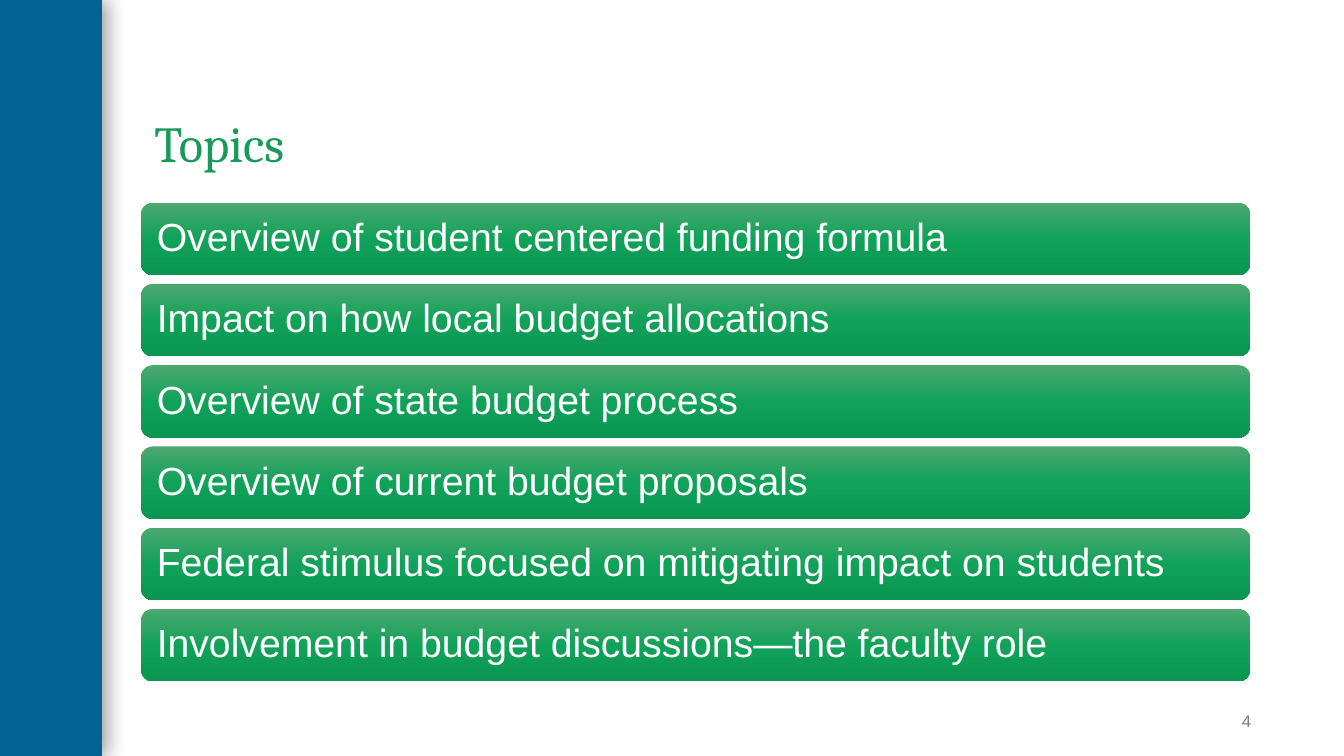
import pptx
import pptx.dml.color
import pptx.enum.shapes
import pptx.enum.text
import pptx.oxml
import pptx.oxml.ns
import pptx.util

Inches = pptx.util.Inches
Shapes = pptx.enum.shapes.MSO_SHAPE
Anchor = pptx.enum.text.MSO_ANCHOR
Align = pptx.enum.text.PP_ALIGN

TOPICS = [
    "Overview of student centered funding formula",
    "Impact on how local budget allocations",
    "Overview of state budget process",
    "Overview of current budget proposals",
    "Federal stimulus focused on mitigating impact on students",
    "Involvement in budget discussions—the faculty role",
]
BAR_GRADIENT = [(0, "4DA870"), (50, "11A25A"), (100, "0A9550")]
NAMESPACE = pptx.oxml.ns.nsdecls("a")


def color(value):
    """Return the colour for a hex string."""
    return pptx.dml.color.RGBColor.from_string(value)


def write_text(shape, text, size, font, hex_color, anchor, insets, align=Align.LEFT, spacing=0.9):
    """Write one formatted paragraph into a shape and return the paragraph."""
    frame = shape.text_frame
    frame.word_wrap = True
    frame.vertical_anchor = anchor
    frame.margin_left, frame.margin_top, frame.margin_right, frame.margin_bottom = map(Inches, insets)
    paragraph = frame.paragraphs[0]
    paragraph.alignment = align
    paragraph.line_spacing = spacing
    run = paragraph.add_run()
    run.text = text
    run.font.size = pptx.util.Pt(size)
    run.font.name = font
    run.font.color.rgb = color(hex_color)
    return paragraph


def fill_gradient(shape, stops):
    """Fill a shape with a gradient running from top to bottom."""
    stop_xml = "".join(
        f'<a:gs pos="{position * 1000}"><a:srgbClr val="{value}"/></a:gs>' for position, value in stops
    )
    gradient = pptx.oxml.parse_xml(
        f'<a:gradFill {NAMESPACE} rotWithShape="1"><a:gsLst>{stop_xml}</a:gsLst>'
        '<a:lin ang="5400000" scaled="0"/></a:gradFill>'
    )
    shape._element.spPr.find(pptx.oxml.ns.qn("a:prstGeom")).addnext(gradient)


def add_side_band(slide, left, top, width, height):
    """Add the blue band with its soft shadow to the right."""
    band = slide.shapes.add_shape(Shapes.RECTANGLE, *map(Inches, (left, top, width, height)))
    band.fill.solid()
    band.fill.fore_color.rgb = color("006393")
    band.line.fill.background()
    band.shadow.inherit = False
    shadow = pptx.oxml.parse_xml(
        f'<a:outerShdw {NAMESPACE} blurRad="{pptx.util.Pt(15)}" dist="{pptx.util.Pt(3)}" dir="0" '
        'algn="l" rotWithShape="0"><a:srgbClr val="000000"><a:alpha val="40000"/></a:srgbClr></a:outerShdw>'
    )
    band._element.spPr.find(pptx.oxml.ns.qn("a:effectLst")).append(shadow)


def add_title(slide, left, top, width, height):
    """Add the slide title at the bottom of its box."""
    box = slide.shapes.add_textbox(*map(Inches, (left, top, width, height)))
    write_text(box, "Topics", 36, "Cambria", "189B5A", Anchor.BOTTOM, [0.13] * 4)


def add_topic_bars(slide, left, top, width, height):
    """Stack one rounded bar per topic, evenly spaced over the box."""
    bar_height = 0.72
    pitch = (height - bar_height) / (len(TOPICS) - 1)
    for index, topic in enumerate(TOPICS):
        bar = slide.shapes.add_shape(
            Shapes.ROUNDED_RECTANGLE, *map(Inches, (left, top + index * pitch, width, bar_height))
        )
        fill_gradient(bar, BAR_GRADIENT)
        bar.line.fill.background()
        bar.shadow.inherit = False
        write_text(bar, topic, 28, "Arial", "FFFFFF", Anchor.MIDDLE, [0.12] * 4)


def add_slide_number(slide, left, top, width, height):
    """Add the right-aligned slide number."""
    box = slide.shapes.add_textbox(*map(Inches, (left, top, width, height)))
    paragraph = write_text(
        box, "4", 12, "Arial", "7F7F7F", Anchor.MIDDLE, (0.1, 0.05, 0, 0.05), Align.RIGHT, 1.0
    )
    paragraph.space_after = pptx.util.Pt(6)


def main():
    """Build the topics slide and save it."""
    presentation = pptx.Presentation()
    presentation.slide_width = Inches(13.33)
    presentation.slide_height = Inches(7.5)
    slide = presentation.slides.add_slide(presentation.slide_layouts[6])
    add_side_band(slide, 0, 0, 1.01, 7.5)
    add_title(slide, 1.4, 0.4, 10.99, 1.45)
    add_slide_number(slide, 11.41, 6.95, 1, 0.4)
    add_topic_bars(slide, 1.4, 2.01, 11, 4.75)
    presentation.save("out.pptx")


if __name__ == "__main__":
    main()
